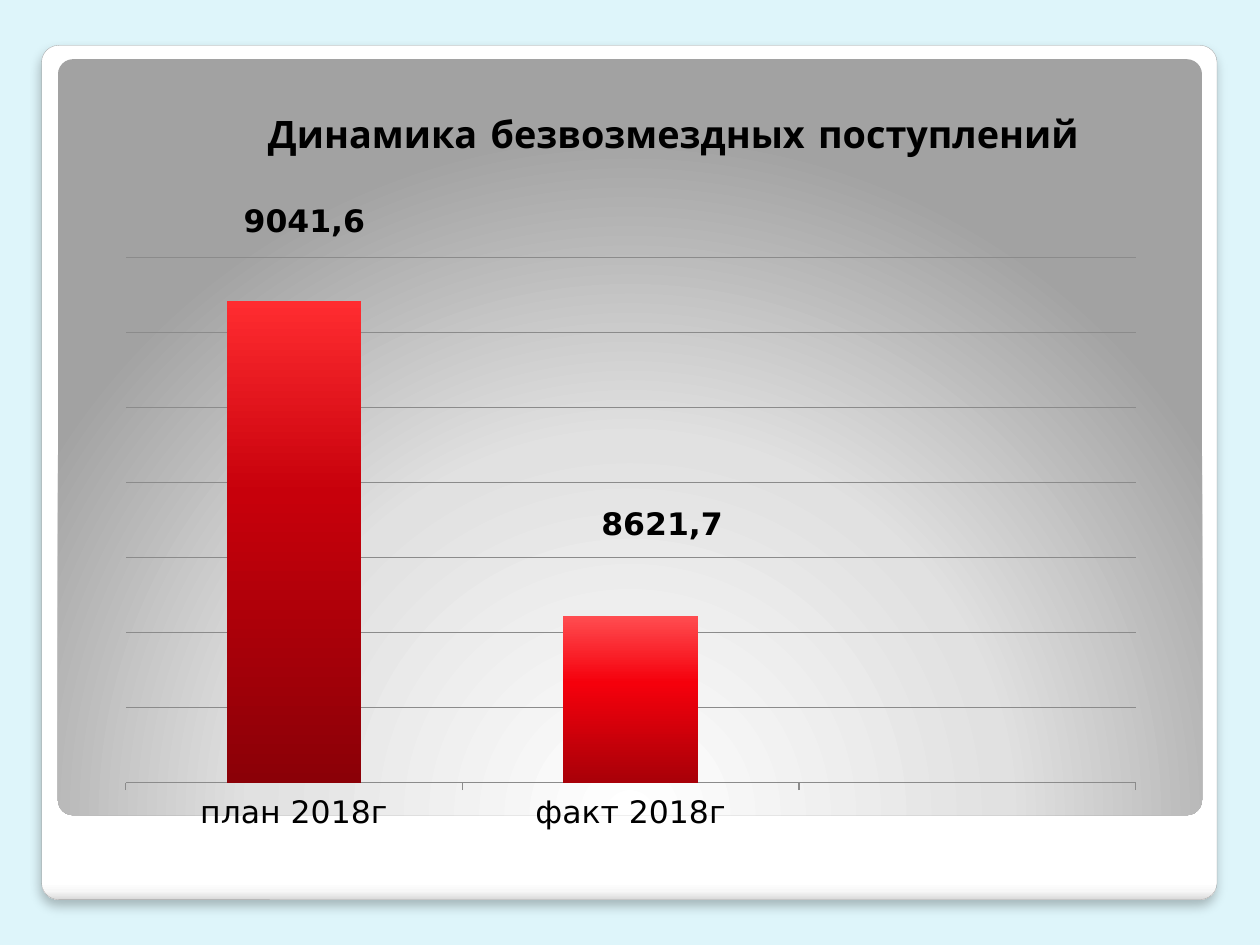
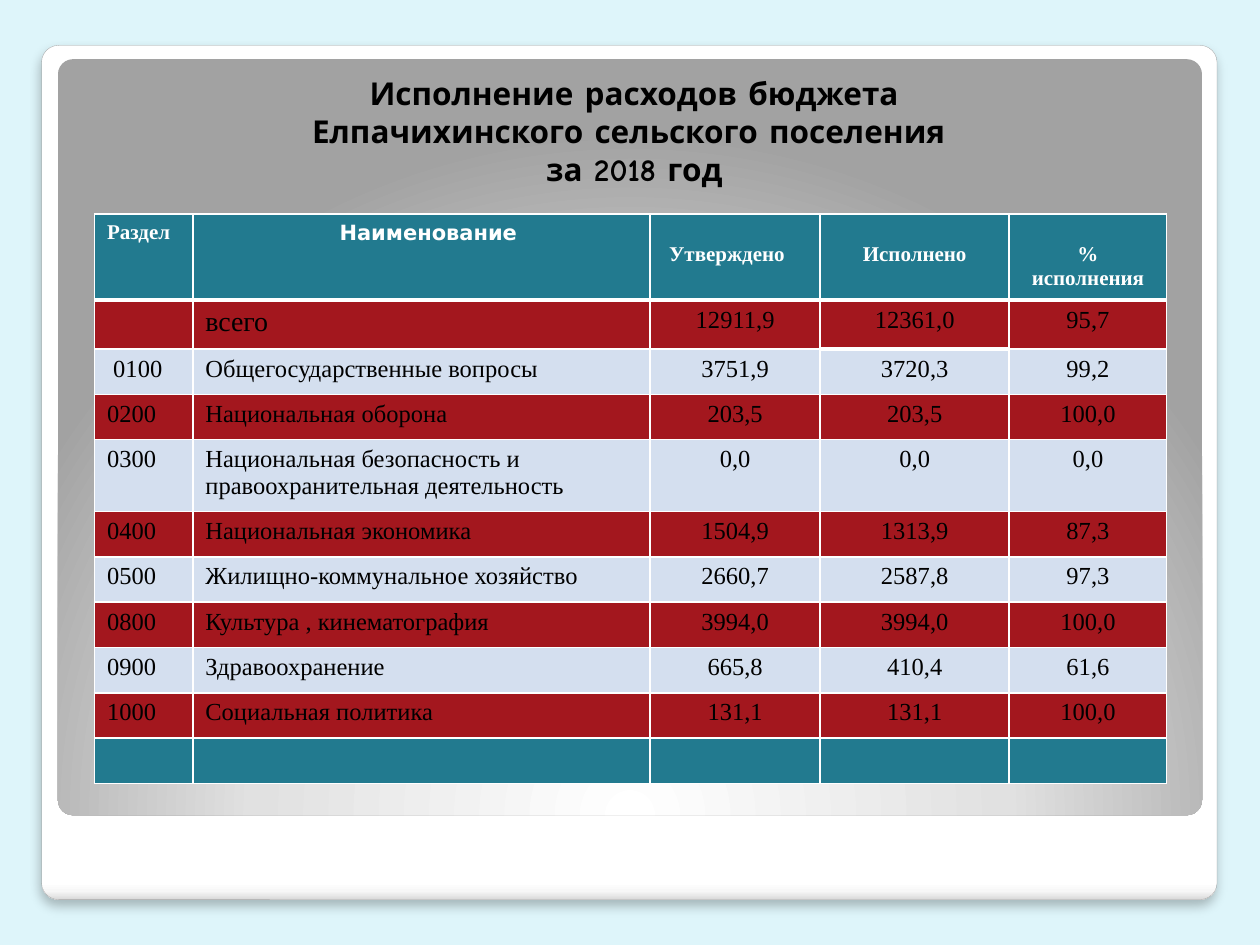
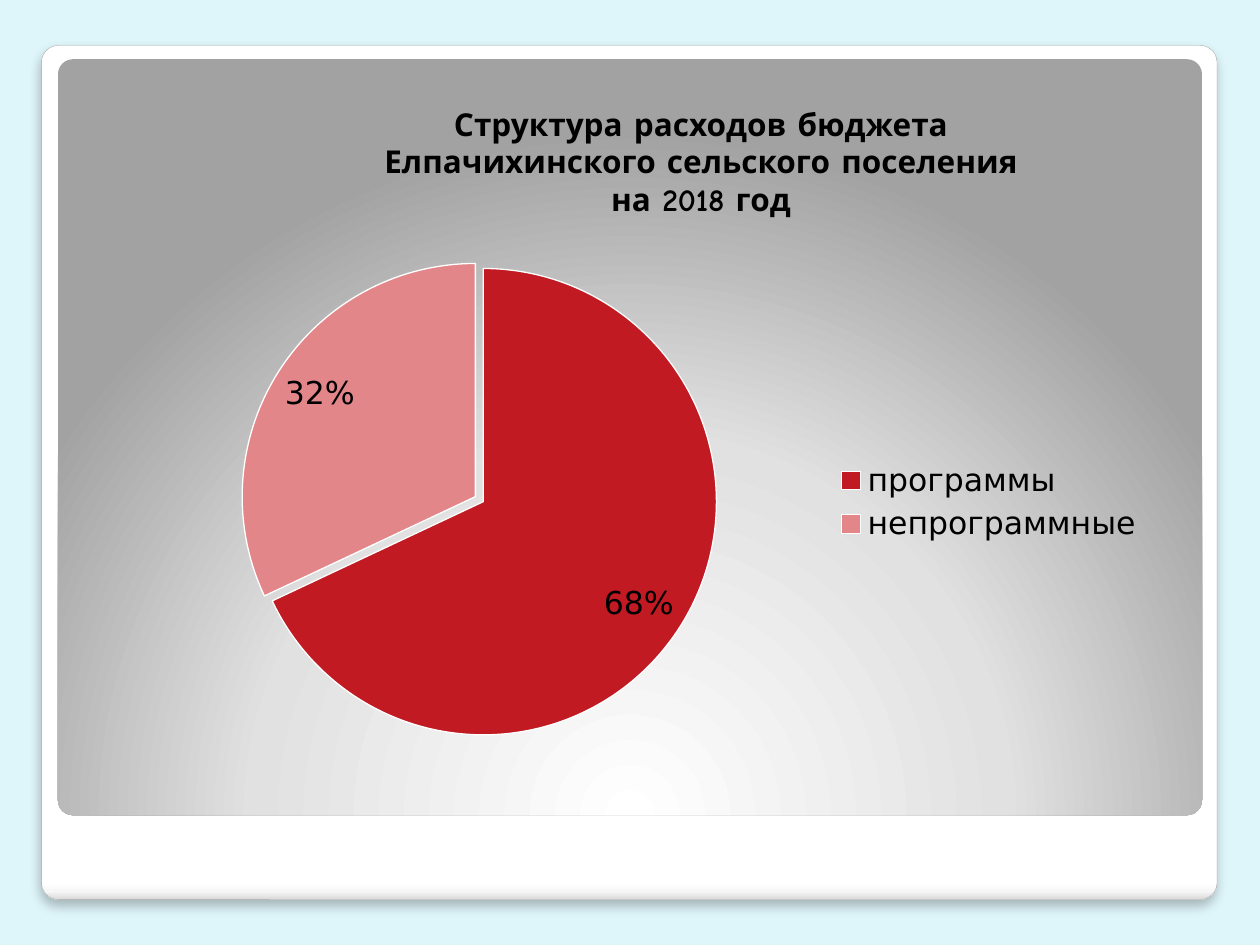
from dataclasses import dataclass
from typing import Any, NamedTuple

import pptx
import pptx.chart.data
import pptx.dml.color
import pptx.enum.chart
import pptx.enum.shapes
import pptx.enum.text
import pptx.oxml
import pptx.oxml.ns
import pptx.util
from pptx.util import Inches, Pt

Stops = tuple[tuple[int, str], ...]


@dataclass(frozen=True)
class Theme:
    background: str = "DEF5FA"
    black: str = "000000"
    white: str = "FFFFFF"
    frame_line: str = "A4A4A4"
    grid_line: str = "8B8B8B"
    header_fill: str = "227A8F"
    red_row: str = "A3171E"
    pale_row: str = "D4DFEF"
    program_slice: str = "C11A22"
    other_slice: str = "E28689"
    frame_stops: Stops = ((0, "FFFFFF"), (98, "FFFFFF"), (99, "F7F7F7"), (100, "DADADA"))
    panel_stops: Stops = ((0, "FFFFFF"), (55, "E1E1E1"), (100, "A2A2A2"))
    plan_stops: Stops = ((0, "FF2C30"), (40, "C7000B"), (100, "8B0007"))
    fact_stops: Stops = ((0, "FF4C50"), (40, "F5000C"), (100, "A80008"))
    title_font: str = "Comic Neue"
    chart_font: str = "DejaVu Sans"
    table_font: str = "Times New Roman"
    large_title: float = 21.6
    title: float = 18
    chart: float = 18
    total: float = 16
    body: float = 14
    header: float = 12


THEME = Theme()


class Box(NamedTuple):
    left: float
    top: float
    width: float
    height: float

    def lengths(self) -> list[int]:
        return [Inches(value) for value in self]


class Title(NamedTuple):
    text: str
    box: Box
    size: float
    left_inset: float = 0.1


class Bar(NamedTuple):
    category: str
    value: float
    label: str
    stops: Stops
    label_shift: tuple[float, float]


class Slice(NamedTuple):
    category: str
    value: float
    color: str


class Header(NamedTuple):
    text: str
    width: float
    font: str = THEME.table_font
    top_inset: float = 0.05
    left_inset: float = 0.1
    right_inset: float = 0.1


TITLES = (
    Title("Динамика безвозмездных поступлений", Box(0.91, 0.75, 8.19, 0.54),
          THEME.large_title, 0.78),
    Title(" Исполнение расходов бюджета \vЕлпачихинского сельского поселения \vза 2018 год",
          Box(0.35, 0.99, 9.37, 0.55), THEME.title),
    Title(" Структура расходов бюджета\v Елпачихинского сельского поселения\v на 2018 год",
          Box(1.54, 0.44, 7.96, 1.34), THEME.title),
)
BARS = (
    Bar("план 2018г", 9041.6, "9041,6", THEME.plan_stops, (0.01, -0.09)),
    Bar("факт 2018г", 8621.7, "8621,7", THEME.fact_stops, (0.03, -0.11)),
)
SLICES = (
    Slice("программы", 0.68, THEME.program_slice),
    Slice("непрограммные", 0.32, THEME.other_slice),
)
SECOND_LINE = 0.23
HEADERS = (
    Header("Раздел", 0.78),
    Header("Наименование", 3.63, THEME.chart_font, left_inset=0.21),
    Header("Утверждено", 1.35, top_inset=SECOND_LINE, right_inset=0.23),
    Header("Исполнено", 1.5, top_inset=SECOND_LINE),
    Header("% исполнения", 1.25, top_inset=SECOND_LINE),
)
EXPENSES = (
    ("", "всего", "12911,9", "12361,0", "95,7"),
    (" 0100", "Общегосударственные вопросы", "3751,9", "3720,3", "99,2"),
    ("0200", "Национальная оборона", "203,5", "203,5", "100,0"),
    ("0300", "Национальная безопасность и правоохранительная деятельность",
     "0,0", "0,0", "0,0"),
    ("0400", "Национальная экономика", "1504,9", "1313,9", "87,3"),
    ("0500", "Жилищно-коммунальное хозяйство", "2660,7", "2587,8", "97,3"),
    ("0800", "Культура , кинематография", "3994,0", "3994,0", "100,0"),
    ("0900", "Здравоохранение", "665,8", "410,4", "61,6"),
    ("1000", "Социальная политика", "131,1", "131,1", "100,0"),
    ("",) * len(HEADERS),
)
ROW_HEIGHT = 0.36
SPECIAL_HEIGHTS = {0: 0.66, 1: 0.39, 4: 0.57}


def rgb(color: str) -> pptx.dml.color.RGBColor:
    return pptx.dml.color.RGBColor.from_string(color)


def xml(tag: str, attributes: str = "", content: str = "") -> Any:
    """Build one element with the drawing and chart namespaces."""
    namespaces = pptx.oxml.ns.nsdecls("a", "c")
    return pptx.oxml.parse_xml(f"<{tag} {namespaces} {attributes}>{content}</{tag}>")


def set_attributes(target: Any, values: dict[str, Any]) -> None:
    for name, value in values.items():
        setattr(target, name, value)


def format_font(font: Any, name: str, size: float, color: str, bold: bool = False) -> None:
    set_attributes(font, {"name": name, "size": Pt(size), "bold": bold})
    font.color.rgb = rgb(color)


def fill_solid(fill: Any, color: str) -> None:
    fill.solid()
    fill.fore_color.rgb = rgb(color)


def fill_gradient(fill: Any, stops: Stops,
                  direction: str = '<a:lin ang="5400000" scaled="0"/>') -> None:
    """Fill with any number of stops, downwards unless told otherwise."""
    fill.solid()
    properties = fill._xPr
    stop_list = "".join(
        f'<a:gs pos="{position * 1000}"><a:srgbClr val="{color}"/></a:gs>'
        for position, color in stops)
    properties.replace(
        properties.find(pptx.oxml.ns.qn("a:solidFill")),
        xml("a:gradFill", 'rotWithShape="1"', f"<a:gsLst>{stop_list}</a:gsLst>{direction}"))


def add_rounded_panel(slide: Any, box: Box) -> Any:
    shape = slide.shapes.add_shape(
        pptx.enum.shapes.MSO_SHAPE.ROUNDED_RECTANGLE, *box.lengths())
    shape.adjustments[0] = 0.02
    shape.shadow.inherit = False
    return shape


def add_frame(slide: Any) -> None:
    """Draw the white card and the grey panel that every slide has."""
    card = add_rounded_panel(slide, Box(0.33, 0.36, 9.33, 6.78))
    fill_gradient(card.fill, THEME.frame_stops)
    card.line.color.rgb = rgb(THEME.frame_line)
    card.line.width = Pt(0.16)
    effects = card._element.spPr.find(pptx.oxml.ns.qn("a:effectLst"))
    effects.append(xml(
        "a:outerShdw",
        f'blurRad="{Pt(6)}" dist="{Pt(4)}" dir="5400000" algn="t" rotWithShape="0"',
        f'<a:srgbClr val="{THEME.black}"><a:alpha val="25000"/></a:srgbClr>'))

    panel = add_rounded_panel(slide, Box(0.46, 0.47, 9.08, 6))
    fill_gradient(
        panel.fill, THEME.panel_stops,
        '<a:path path="circle">'
        '<a:fillToRect l="50000" t="175000" r="50000" b="-75000"/></a:path>')
    panel.line.fill.background()


def add_title(slide: Any, title: Title) -> None:
    frame = slide.shapes.add_textbox(*title.box.lengths()).text_frame
    set_attributes(frame, {
        "word_wrap": True,
        "vertical_anchor": pptx.enum.text.MSO_ANCHOR.BOTTOM,
        "margin_left": Inches(title.left_inset),
    })
    paragraph = frame.paragraphs[0]
    paragraph.text = title.text
    paragraph.alignment = pptx.enum.text.PP_ALIGN.CENTER
    for run in paragraph.runs:
        format_font(run.font, THEME.title_font, title.size, THEME.black, True)


def manual_layout(x: float, y: float, size: tuple[float, float] | None = None) -> Any:
    """Place a plot by its inner area, or shift a label when no size is given."""
    parts = []
    if size:
        parts += [("layoutTarget", "inner"), ("xMode", "edge"), ("yMode", "edge")]
    parts += [("x", x), ("y", y)]
    if size:
        parts += [("w", size[0]), ("h", size[1])]
    content = "".join(f'<c:{name} val="{value}"/>' for name, value in parts)
    return xml("c:layout", content=f"<c:manualLayout>{content}</c:manualLayout>")


def add_chart(slide: Any, kind: Any, box: Box, plot: Box,
              categories: list[str], values: list[float | None]) -> Any:
    data = pptx.chart.data.CategoryChartData()
    data.categories = categories
    data.add_series("Series 1", values)
    chart = slide.shapes.add_chart(kind, *box.lengths(), data).chart
    set_attributes(chart, {"has_title": False, "has_legend": False})
    format_font(chart.font, THEME.chart_font, THEME.chart, THEME.black)
    plot_area = chart._chartSpace.chart.plotArea
    for layout in plot_area.findall(pptx.oxml.ns.qn("c:layout")):
        plot_area.remove(layout)
    plot_area.insert(0, manual_layout(plot.left, plot.top, (plot.width, plot.height)))
    return chart


def add_income_chart(slide: Any) -> None:
    """Draw two bars and leave the third place of the series empty."""
    chart = add_chart(
        slide, pptx.enum.chart.XL_CHART_TYPE.COLUMN_CLUSTERED,
        Box(0.83, 1.62, 8.35, 5.04), Box(0.02, 0.07, 0.96, 0.84),
        [bar.category for bar in BARS], [bar.value for bar in BARS] + [None])
    set_attributes(chart.value_axis, {
        "minimum_scale": 8400, "maximum_scale": 9100, "major_unit": 100,
        "has_major_gridlines": True, "visible": False,
    })
    chart.category_axis.major_tick_mark = pptx.enum.chart.XL_TICK_MARK.OUTSIDE
    for line in (chart.value_axis.major_gridlines.format.line,
                 chart.category_axis.format.line):
        line.color.rgb = rgb(THEME.grid_line)
        line.width = Pt(0.75)

    plot = chart.plots[0]
    set_attributes(plot, {"gap_width": 150, "vary_by_categories": False})
    series = plot.series[0]
    series.data_labels.show_value = True
    for leader_lines in series._element.iter(pptx.oxml.ns.qn("c:showLeaderLines")):
        leader_lines.set("val", "0")
    for point_index, bar in enumerate(BARS):
        point = series.points[point_index]
        fill_gradient(point.format.fill, bar.stops)
        label = point.data_label
        label.text_frame.text = bar.label
        format_font(label.text_frame.paragraphs[0].runs[0].font,
                    THEME.chart_font, THEME.chart, THEME.black, True)
        label.position = pptx.enum.chart.XL_LABEL_POSITION.OUTSIDE_END
        label._get_or_add_dLbl().insert(1, manual_layout(*bar.label_shift))


def add_structure_chart(slide: Any) -> None:
    chart = add_chart(
        slide, pptx.enum.chart.XL_CHART_TYPE.PIE,
        Box(0.91, 1.7, 8.27, 4.57), Box(0.12, 0.09, 0.46, 0.81),
        [part.category for part in SLICES], [part.value for part in SLICES])
    chart.has_legend = True
    set_attributes(chart.legend, {
        "position": pptx.enum.chart.XL_LEGEND_POSITION.RIGHT,
        "include_in_layout": False,
    })
    plot = chart.plots[0]
    set_attributes(plot, {"vary_by_categories": True, "has_data_labels": True})
    set_attributes(plot.data_labels, {
        "show_value": True, "show_percentage": False,
        "number_format": "0%", "number_format_is_linked": False,
        "position": pptx.enum.chart.XL_LABEL_POSITION.INSIDE_END,
    })
    format_font(plot.data_labels.font, THEME.chart_font, THEME.chart, THEME.black)
    for point_index, part in enumerate(SLICES):
        appearance = plot.series[0].points[point_index].format
        fill_solid(appearance.fill, part.color)
        appearance.line.color.rgb = rgb(THEME.white)
        appearance.line.width = Pt(0.75)
        appearance.fill._xPr.addprevious(xml("c:explosion", 'val="2"'))


def top_border_width(row: int, column: int) -> float:
    return 3 if row == 1 or (row, column) == (2, 3) else 1


def add_cell_borders(cell: Any, row: int, column: int) -> None:
    widths = {"L": 1, "R": 1, "T": top_border_width(row, column),
              "B": top_border_width(row + 1, column)}
    properties = cell._tc.get_or_add_tcPr()
    for position, (side, width) in enumerate(widths.items()):
        properties.insert(position, xml(
            f"a:ln{side}", f'w="{Pt(width)}"',
            f'<a:solidFill><a:srgbClr val="{THEME.white}"/></a:solidFill>'))


def row_fill(row: int) -> str:
    if row in (0, len(EXPENSES)):
        return THEME.header_fill
    return THEME.red_row if row % 2 else THEME.pale_row


def write_cell(cell: Any, row: int, column: int, text: str) -> None:
    header = HEADERS[column]
    fill_solid(cell.fill, row_fill(row))
    add_cell_borders(cell, row, column)
    paragraph = cell.text_frame.paragraphs[0]
    if not text:
        paragraph._p.get_or_add_endParaRPr().set("sz", str(int(THEME.body * 100)))
        return
    run = paragraph.add_run()
    run.text = text
    if row == 0:
        set_attributes(cell, {
            "margin_top": Inches(header.top_inset),
            "margin_left": Inches(header.left_inset),
            "margin_right": Inches(header.right_inset),
        })
        format_font(run.font, header.font, THEME.header, THEME.white, True)
    else:
        size = THEME.total if (row, column) == (1, 1) else THEME.body
        format_font(run.font, THEME.table_font, size, THEME.black)
    if column >= 2 or (row, column) == (0, 1):
        paragraph.alignment = pptx.enum.text.PP_ALIGN.CENTER


def add_expense_table(slide: Any) -> None:
    rows = (tuple(header.text for header in HEADERS), *EXPENSES)
    heights = [SPECIAL_HEIGHTS.get(row, ROW_HEIGHT) for row in range(len(rows))]
    box = Box(0.75, 1.7, sum(header.width for header in HEADERS), sum(heights))
    table = slide.shapes.add_table(len(rows), len(HEADERS), *box.lengths()).table
    set_attributes(table, {"first_row": False, "horz_banding": False})
    for column, header in zip(table.columns, HEADERS):
        column.width = Inches(header.width)
    for row, texts in enumerate(rows):
        table.rows[row].height = Inches(heights[row])
        for column, text in enumerate(texts):
            write_cell(table.cell(row, column), row, column, text)


def main() -> None:
    presentation = pptx.Presentation()
    set_attributes(presentation, {"slide_width": Inches(10), "slide_height": Inches(7.5)})
    fill_solid(presentation.slide_master.background.fill, THEME.background)
    contents = (add_income_chart, add_expense_table, add_structure_chart)
    for title, add_content in zip(TITLES, contents):
        slide = presentation.slides.add_slide(presentation.slide_layouts[6])
        add_frame(slide)
        add_title(slide, title)
        add_content(slide)
    presentation.save("out.pptx")


if __name__ == "__main__":
    main()
